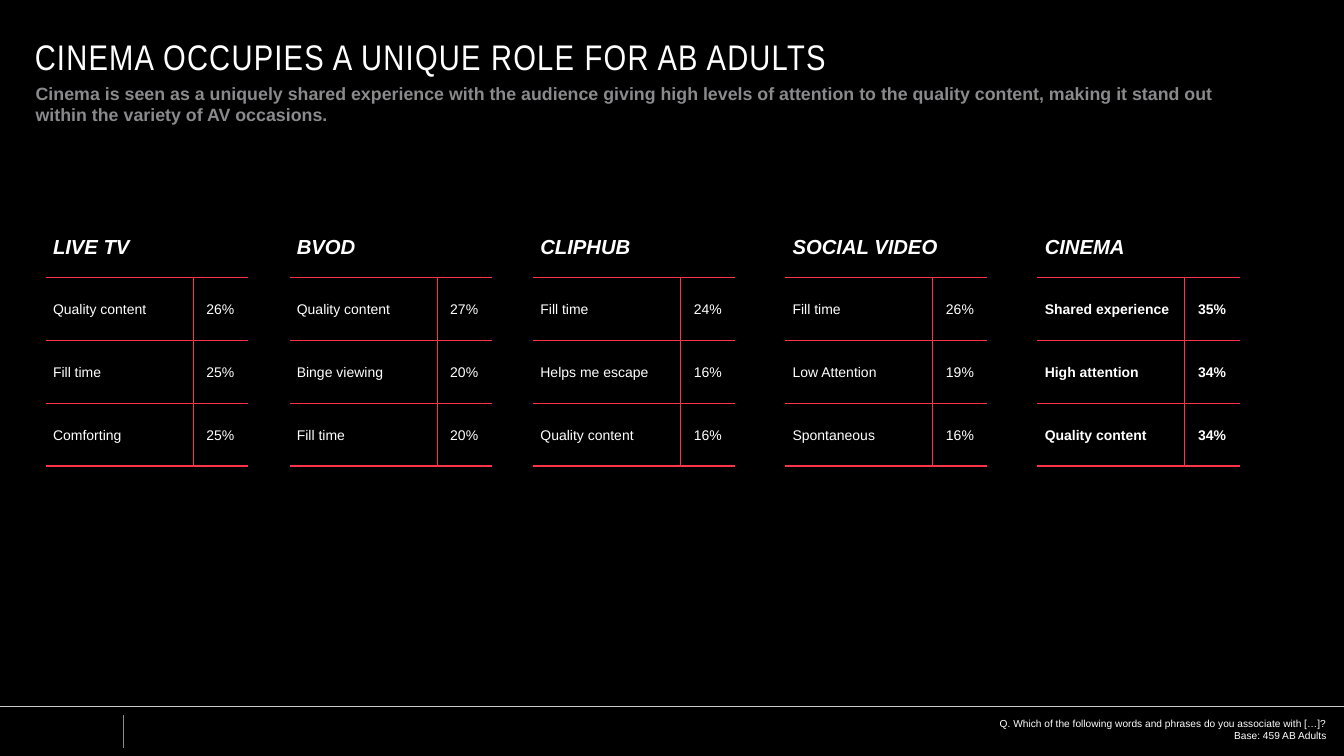
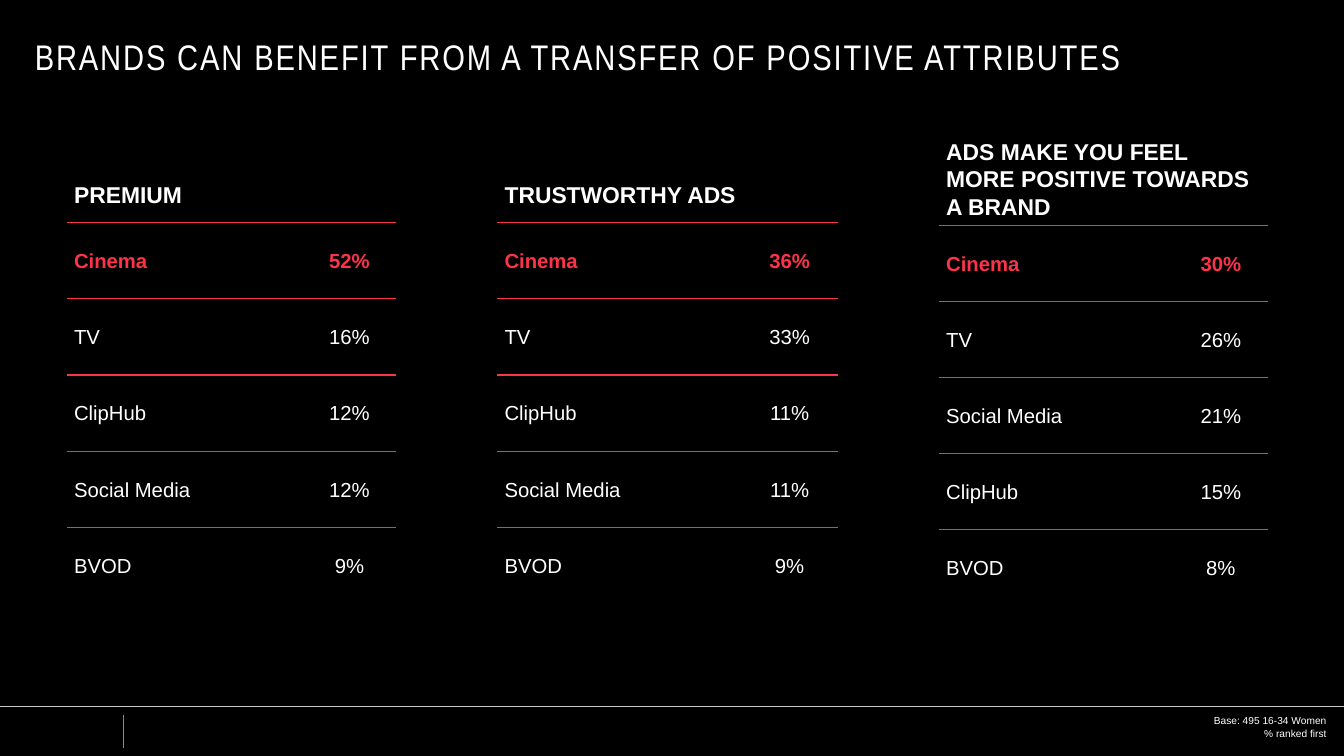
from lxml import etree
from pptx import Presentation
from pptx import util as u
from pptx.dml.color import RGBColor
from pptx.enum import shapes, text
from pptx.oxml.ns import qn

Pt = u.Pt
WIDTH, HEIGHT = 1058.4, 595.44
BLACK, WHITE, RED, GREY, SILVER = "000000", "FFFFFF", "FB3449", "8A8A8D", "CAC8C8"
TITLE = dict(name="Arial Narrow", size=28, color=WHITE)
SUBTITLE = dict(name="Arial", size=14, color=GREY, bold=True)
NOTE = dict(name="Arial", size=8, color=WHITE)
CELL = dict(name="Arial", color=WHITE, bold=False, italic=False)
LEFT, CENTER, RIGHT = (text.PP_ALIGN.LEFT, text.PP_ALIGN.CENTER, text.PP_ALIGN.RIGHT)


def rgb(value):
    return RGBColor.from_string(value)


class Deck:
    def __init__(self):
        self.prs = Presentation()
        self.prs.slide_width, self.prs.slide_height = Pt(WIDTH), Pt(HEIGHT)
        self.s = None

    def slide(self, title, spacing):
        self.s = self.prs.slides.add_slide(self.prs.slide_layouts[6])
        fill = self.s.background.fill
        fill.solid()
        fill.fore_color.rgb = rgb(BLACK)
        self.line(97.2, 563, 97.2, 589, GREY, 0.75)
        self.line(0, 556.6, WIDTH, 556.6, SILVER, 0.5)
        tf = self.text(27.4, 28, 978, 32.4, [title], TITLE)
        tf.vertical_anchor = text.MSO_ANCHOR.MIDDLE
        r = tf.paragraphs[0].runs[0]
        r._r.get_or_add_rPr().set("spc", str(int(spacing * 100)))

    def line(self, x1, y1, x2, y2, color, width):
        sp = self.s.shapes.add_connector(
            shapes.MSO_CONNECTOR.STRAIGHT, Pt(x1), Pt(y1), Pt(x2), Pt(y2))
        sp.line.color.rgb = rgb(color)
        sp.line.width = Pt(width)
        etree.SubElement(sp._element.spPr, qn("a:effectLst"))

    def add_words(self, p, words, fmt, align=LEFT):
        p.alignment = align
        r = p.add_run()
        r.text = words
        for key, value in fmt.items():
            if key == "color":
                r.font.color.rgb = rgb(value)
            else:
                setattr(r.font, key, Pt(value) if key == "size" else value)

    def text(self, x, y, w, h, lines, fmt, align=LEFT, spacing=None):
        tf = self.s.shapes.add_textbox(Pt(x), Pt(y), Pt(w), Pt(h)).text_frame
        tf.word_wrap = True
        tf.margin_left = tf.margin_right = tf.margin_top = tf.margin_bottom = 0
        for i, words in enumerate(lines):
            p = tf.add_paragraph() if i else tf.paragraphs[0]
            if spacing:
                p.line_spacing = Pt(spacing)
            self.add_words(p, words, fmt, align)
        return tf

    def footnote(self, y, lines):
        self.text(433.4, y, 611.3, 19.4, lines, NOTE, RIGHT)

    def borders(self, cell, widths):
        tcPr = cell._tc.get_or_add_tcPr()
        for side in "LRTB":
            width = widths.get(side, 0)
            ln = etree.SubElement(tcPr, qn("a:ln" + side), w=str(int(Pt(width))))
            if width:
                fill = etree.SubElement(ln, qn("a:solidFill"))
                etree.SubElement(fill, qn("a:srgbClr"), val=RED)
            else:
                etree.SubElement(ln, qn("a:noFill"))
        cell.fill.background()

    def table(self, x, y, cols, rows, heading, data, heading_fmt, row_fmts,
              rule, divider=0, closed=False):
        tbl = self.s.shapes.add_table(
            len(rows), 2, Pt(x), Pt(y), Pt(sum(cols)), Pt(sum(rows))).table
        tbl.first_row = tbl.horz_banding = False
        for col, width in zip(tbl.columns, cols):
            col.width = Pt(width)
        for row, height in zip(tbl.rows, rows):
            row.height = Pt(height)
        tbl.cell(0, 0).merge(tbl.cell(0, 1))
        for i, values in enumerate([(heading, "")] + data):
            fmt = row_fmts[i - 1] if i else heading_fmt
            for j, words in enumerate(values):
                cell = tbl.cell(i, j)
                cell.margin_left = cell.margin_right = Pt(5.76)
                cell.margin_top = cell.margin_bottom = 0
                cell.vertical_anchor = text.MSO_ANCHOR.MIDDLE
                widths = {"B": rule if i < len(data) or closed else 0}
                if i:
                    widths.update({"T": rule, "RL"[j]: divider})
                self.borders(cell, widths)
                if words:
                    p = cell.text_frame.paragraphs[0]
                    p.line_spacing = 1.07
                    self.add_words(p, words, {**CELL, **fmt}, CENTER if j else LEFT)


def role_slide(deck):
    deck.slide("CINEMA OCCUPIES A UNIQUE ROLE FOR AB ADULTS", 1)
    deck.footnote(565.2, [
        "Q. Which of the following words and phrases do you associate with […]?",
        "Base: 459 AB Adults"])
    channels = [
        (36, "LIVE TV", [("Quality content", "26%"), ("Fill time", "25%"),
                         ("Comforting", "25%")]),
        (228, "BVOD", [("Quality content", "27%"), ("Binge viewing", "20%"),
                       ("Fill time", "20%")]),
        (419.8, "CLIPHUB", [("Fill time", "24%"), ("Helps me escape", "16%"),
                            ("Quality content", "16%")]),
        (618.4, "SOCIAL VIDEO", [("Fill time", "26%"), ("Low Attention", "19%"),
                                 ("Spontaneous", "16%")]),
        (817, "CINEMA", [("Shared experience", "35%"), ("High attention", "34%"),
                         ("Quality content", "34%")]),
    ]
    for x, heading, data in channels:
        fmt = dict(size=11, bold=heading == "CINEMA")
        deck.table(x, 169.2, [116, 43.2], [49.5] * 4, heading, data,
                   dict(size=16, bold=True, italic=True), [fmt] * 3,
                   1.5, divider=0.5, closed=True)
    deck.text(28.1, 64.8, 964, 34, [
        "Cinema is seen as a uniquely shared experience with the audience giving "
        "high levels of attention to the quality content, making it stand out "
        "within the variety of AV occasions."], SUBTITLE, spacing=16.8)


def attributes_slide(deck):
    deck.slide("BRANDS CAN BENEFIT FROM A TRANSFER OF POSITIVE ATTRIBUTES", 1.5)
    rankings = [
        (52.6, 131, [185.6, 74], 44, 60.2, "PREMIUM",
         [("Cinema", "52%"), ("TV", "16%"), ("ClipHub", "12%"),
          ("Social Media", "12%"), ("BVOD", "9%")]),
        (391.6, 131, [192, 76.4], 44, 60.2, "TRUSTWORTHY ADS",
         [("Cinema", "36%"), ("TV", "33%"), ("ClipHub", "11%"),
          ("Social Media", "11%"), ("BVOD", "9%")]),
        (739.4, 104.2, [185, 74], 73.4, 59.9,
         "ADS MAKE YOU FEEL MORE POSITIVE TOWARDS A BRAND",
         [("Cinema", "30%"), ("TV", "26%"), ("Social Media", "21%"),
          ("ClipHub", "15%"), ("BVOD", "8%")]),
    ]
    fmts = [dict(size=16, bold=True, color=RED)] + [dict(size=16)] * 4
    for x, y, cols, top, height, heading, data in rankings:
        deck.table(x, y, cols, [top] + [height] * 5, heading, data,
                   dict(size=18, bold=True), fmts, 1)
    deck.footnote(563, ["Base: 495 16-34 Women", "% ranked first"])


def main():
    deck = Deck()
    role_slide(deck)
    attributes_slide(deck)
    deck.prs.save("out.pptx")


if __name__ == "__main__":
    main()
